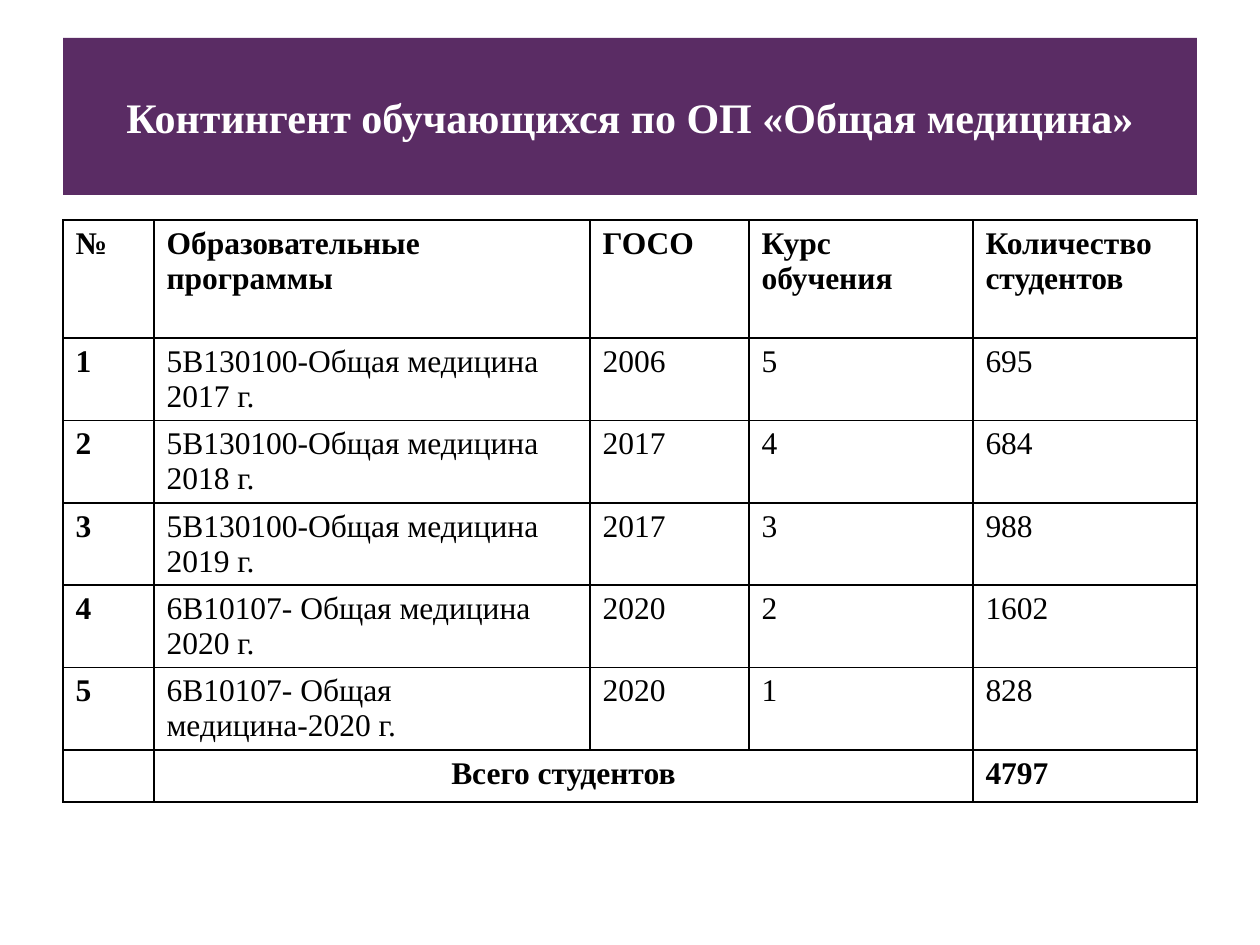
from lxml import etree
from pptx import Presentation
from pptx.dml.color import RGBColor
from pptx.enum.text import MSO_ANCHOR, PP_ALIGN
from pptx.oxml.ns import qn
from pptx.util import Emu, Pt

PIXEL = 914400 // 126
FONT = "Times New Roman"
BLACK = "000000"
WHITE = "FFFFFF"
PURPLE = "5A2C64"
LEFT = PP_ALIGN.LEFT
CENTER = PP_ALIGN.CENTER
MIDDLE = MSO_ANCHOR.MIDDLE
TITLE_ONLY = 5

TITLE = "Контингент обучающихся по ОП «Общая медицина»"
HEADER = ["№", "Образовательные программы", "ГОСО", "Курс обучения", "Количество студентов"]
PROGRAMMES = [
    ["1", "5В130100-Общая медицина 2017 г.", "2006", "5", "695"],
    ["2", "5В130100-Общая медицина 2018 г.", "2017", "4", "684"],
    ["3", "5В130100-Общая медицина 2019 г.", "2017", "3", "988"],
    ["4", "6В10107- Общая медицина 2020 г.", "2020", "2", "1602"],
    ["5", "6В10107- Общая медицина-2020 г.", "2020", "1", "828"],
]
TOTAL = ["", "Всего студентов", "", "", "4797"]
COLUMN_WIDTHS = [91, 436, 159, 224, 224]
ROW_HEIGHTS = [118] + [82] * len(PROGRAMMES) + [52]


def px(length):
    return Emu(length * PIXEL)


def color(hex_string):
    return RGBColor.from_string(hex_string)


def write_text(text_frame, text, size, text_color, bold, alignment):
    text_frame.text = text
    paragraph = text_frame.paragraphs[0]
    paragraph.alignment = alignment
    for run in paragraph.runs:
        run.font.name = FONT
        run.font.size = Pt(size)
        run.font.bold = bold
        run.font.color.rgb = color(text_color)


def add_title(slide):
    title = slide.shapes.title
    title.left, title.top, title.width, title.height = px(63), px(38), px(1134), px(157)
    title.fill.solid()
    title.fill.fore_color.rgb = color(PURPLE)
    title.text_frame.vertical_anchor = MIDDLE
    write_text(title.text_frame, TITLE, 24, WHITE, True, CENTER)


def set_borders(cell, border_color):
    properties = cell._tc.get_or_add_tcPr()
    for side in ("a:lnL", "a:lnR", "a:lnT", "a:lnB"):
        line = etree.SubElement(properties, qn(side), w=str(Pt(1)))
        fill = etree.SubElement(line, qn("a:solidFill"))
        etree.SubElement(fill, qn("a:srgbClr"), val=border_color)


def add_student_table(slide):
    rows = [HEADER, *PROGRAMMES, TOTAL]
    last_row = len(rows) - 1
    table = slide.shapes.add_table(
        len(rows), len(HEADER), px(63), px(220),
        px(sum(COLUMN_WIDTHS)), px(sum(ROW_HEIGHTS)),
    ).table
    table.first_row = False
    table.horz_banding = False
    for column, width in zip(table.columns, COLUMN_WIDTHS):
        column.width = px(width)
    for row, height in zip(table.rows, ROW_HEIGHTS):
        row.height = px(height)
    for row_index, values in enumerate(rows):
        for column_index, value in enumerate(values):
            cell = table.cell(row_index, column_index)
            bold = row_index in (0, last_row) or column_index == 0
            centered = row_index == last_row and column_index == 1
            write_text(cell.text_frame, value, 18, BLACK, bold, CENTER if centered else LEFT)
            set_borders(cell, BLACK)
            cell.fill.background()
    table.cell(last_row, 1).merge(table.cell(last_row, 3))


def main():
    presentation = Presentation()
    presentation.slide_width = px(1260)
    presentation.slide_height = px(945)
    slide = presentation.slides.add_slide(presentation.slide_layouts[TITLE_ONLY])
    add_title(slide)
    add_student_table(slide)
    presentation.save("out.pptx")


if __name__ == "__main__":
    main()
